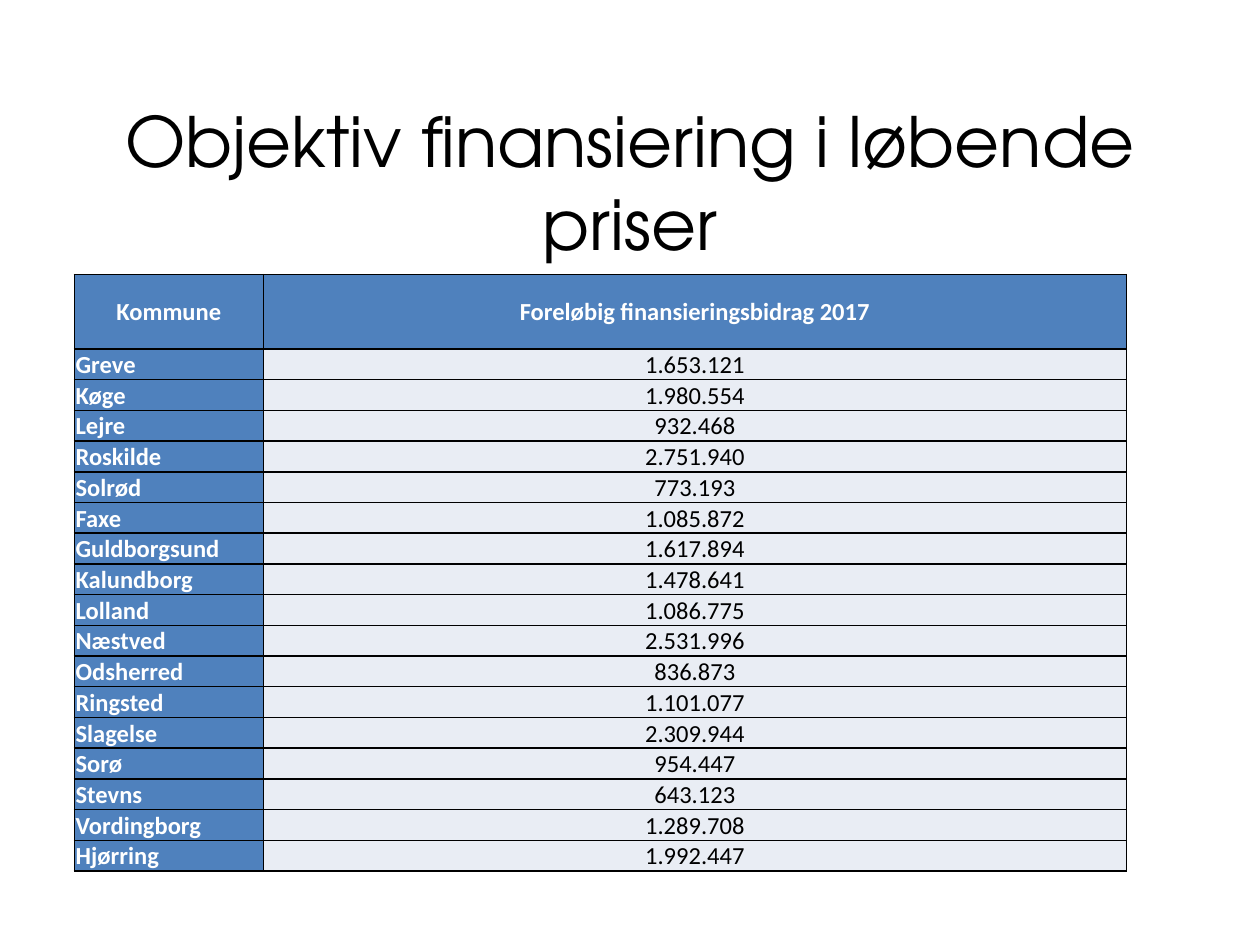
from pptx import Presentation
from pptx.dml.color import RGBColor
from pptx.enum.text import MSO_ANCHOR as Anchor, PP_ALIGN as Align
from pptx.oxml import parse_xml
from pptx.oxml.ns import nsdecls
from pptx.util import Inches, Pt

COLORS = {"ink": "000000", "paper": "FFFFFF", "blue": "4F81BD", "pale": "E9EDF4"}
TITLE = "Objektiv finansiering i løbende priser"
HEADERS = ("Kommune", "Foreløbig finansieringsbidrag 2017")
CONTRIBUTIONS = [
    ("Greve", "1.653.121"),
    ("Køge", "1.980.554"),
    ("Lejre", "932.468"),
    ("Roskilde", "2.751.940"),
    ("Solrød", "773.193"),
    ("Faxe", "1.085.872"),
    ("Guldborgsund", "1.617.894"),
    ("Kalundborg", "1.478.641"),
    ("Lolland", "1.086.775"),
    ("Næstved", "2.531.996"),
    ("Odsherred", "836.873"),
    ("Ringsted", "1.101.077"),
    ("Slagelse", "2.309.944"),
    ("Sorø", "954.447"),
    ("Stevns", "643.123"),
    ("Vordingborg", "1.289.708"),
    ("Hjørring", "1.992.447"),
]
COLUMN_WIDTHS = (1.5, 6.85)
HEADER_HEIGHT, ROW_HEIGHT = 0.59, 0.24


def color(name):
    return RGBColor.from_string(COLORS[name])


def style_para(para, text, font_name, size, ink, align, bold=False):
    para.text = text
    para.alignment = align
    font = para.font
    font.name, font.size, font.bold = font_name, Pt(size), bold
    font.color.rgb = color(ink)


def add_title(page, width, height):
    box = page.shapes.add_textbox(
        int(width * 0.05), int(height * 0.112), int(width * 0.9), int(height * 0.16)
    )
    frame = box.text_frame
    frame.word_wrap = True
    frame.vertical_anchor = Anchor.MIDDLE
    style_para(frame.paragraphs[0], TITLE, "TeX Gyre Adventor", 39.6, "ink", Align.CENTER)


def add_borders(cell):
    properties = cell._tc.get_or_add_tcPr()
    for index, side in enumerate(("lnL", "lnR", "lnT", "lnB")):
        line = parse_xml(
            f'<a:{side} {nsdecls("a")} w="{Pt(1)}"><a:solidFill>'
            f'<a:srgbClr val="{COLORS["ink"]}"/></a:solidFill></a:{side}>'
        )
        properties.insert(index, line)


def fill_cell(cell, text, is_label, align):
    cell.fill.solid()
    cell.fill.fore_color.rgb = color("blue" if is_label else "pale")
    cell.vertical_anchor = Anchor.MIDDLE
    cell.margin_left = cell.margin_right = cell.margin_top = Inches(0.01)
    cell.margin_bottom = 0
    ink = "paper" if is_label else "ink"
    style_para(cell.text_frame.paragraphs[0], text, "Calibri", 14, ink, align, is_label)
    add_borders(cell)


def add_contribution_table(page):
    rows = [HEADERS, *CONTRIBUTIONS]
    table_height = HEADER_HEIGHT + ROW_HEIGHT * len(CONTRIBUTIONS)
    table = page.shapes.add_table(
        len(rows), len(HEADERS), Inches(0.59), Inches(2.18),
        Inches(sum(COLUMN_WIDTHS)), Inches(table_height),
    ).table
    for column, width in zip(table.columns, COLUMN_WIDTHS):
        column.width = Inches(width)
    for r, texts in enumerate(rows):
        table.rows[r].height = Inches(ROW_HEIGHT if r else HEADER_HEIGHT)
        for c, text in enumerate(texts):
            align = Align.LEFT if r and c == 0 else Align.CENTER
            fill_cell(table.cell(r, c), text, r == 0 or c == 0, align)


def main():
    deck = Presentation()
    deck.slide_width, deck.slide_height = Inches(10), Inches(7.5)
    page = deck.slides.add_slide(deck.slide_layouts[6])
    add_title(page, deck.slide_width, deck.slide_height)
    add_contribution_table(page)
    deck.save("out.pptx")


if __name__ == "__main__":
    main()
